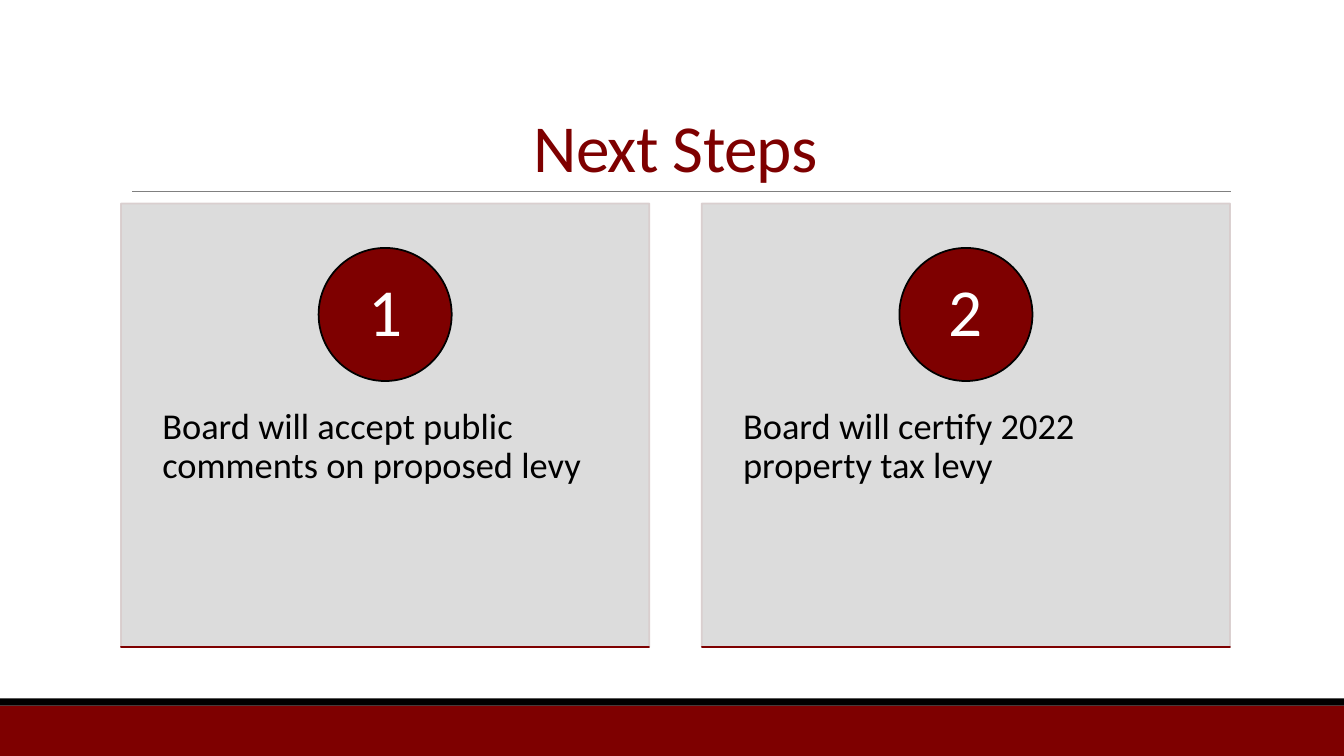
import pptx
import pptx.util
import pptx.dml.color
import pptx.enum.shapes
import pptx.enum.text
import pptx.oxml.ns
import lxml.etree

Inches = pptx.util.Inches
Shape = pptx.enum.shapes.MSO_SHAPE
Anchor = pptx.enum.text.MSO_ANCHOR
Align = pptx.enum.text.PP_ALIGN
qn = pptx.oxml.ns.qn

COLORS = {
    "maroon": "7E0000",
    "black": "000000",
    "white": "FFFFFF",
    "rule": "808080",
    "card": "D9D9D9",
    "card_edge": "D8CCCC",
}


class Slide:
    """Holds the style and the current page."""

    font = "Calibri"

    def __init__(self, page):
        self.page = page

    def paint(self, fill, color, alpha=None):
        fill.solid()
        fill.fore_color.rgb = pptx.dml.color.RGBColor.from_string(COLORS[color])
        if alpha:
            node = fill._xPr.find(qn("a:solidFill"))[0]
            lxml.etree.SubElement(node, qn("a:alpha"), val=str(alpha * 1000))

    def shape(self, kind, place, fill, edge=None, alpha=None):
        shape = self.page.shapes.add_shape(kind, *map(Inches, place))
        shape.shadow.inherit = False
        self.paint(shape.fill, fill, alpha)
        if edge:
            shape.line.width = pptx.util.Pt(1.25)
            self.paint(shape.line.fill, edge, alpha)
        else:
            shape.line.fill.background()
        return shape

    def line(self, start, end, color, width):
        line = self.page.shapes.add_connector(
            pptx.enum.shapes.MSO_CONNECTOR.STRAIGHT, *map(Inches, start + end))
        line.line.width = pptx.util.Pt(width)
        self.paint(line.line.fill, color)
        lxml.etree.SubElement(line._element.spPr, qn("a:effectLst"))

    def label(self, shape, words, size, color, align, anchor,
              margins=(0.1, 0.05), spacing=0.9, tracking=None):
        frame = shape.text_frame
        frame.word_wrap = True
        frame.vertical_anchor = anchor
        frame.margin_left = frame.margin_right = Inches(margins[0])
        frame.margin_top = frame.margin_bottom = Inches(margins[1])
        para = frame.paragraphs[0]
        para.alignment = align
        para.line_spacing = spacing
        span = para.add_run()
        span.text = words
        span.font.name = self.font
        span.font.size = pptx.util.Pt(size)
        self.paint(span.font.fill, color)
        if tracking:
            span.font._element.set("spc", str(int(tracking * 100)))

    def text(self, place, *args, **style):
        box = self.page.shapes.add_textbox(*map(Inches, place))
        self.label(box, *args, **style)

    def card(self, left, number, words):
        top, width, height, circle = 2.02, 5.24, 4.4, 1.32
        self.shape(Shape.RECTANGLE, (left, top, width, height),
                   "card", "card_edge", alpha=90)
        self.text((left, 3.69, width, 2.64), words, 26, "black",
                  Align.LEFT, Anchor.TOP, margins=(0.41, 0.36))
        badge = self.shape(Shape.OVAL, (left + (width - circle) / 2, top + 0.44,
                                        circle, circle), "maroon", "black")
        self.label(badge, str(number), 48, "white", Align.CENTER,
                   Anchor.MIDDLE, margins=(0.1, 0.01))
        self.shape(Shape.RECTANGLE, (left, top + height, width, 0),
                   "maroon", "maroon")


def main():
    deck = pptx.Presentation()
    deck.slide_width, deck.slide_height = Inches(13.33), Inches(7.5)
    slide = Slide(deck.slides.add_slide(deck.slide_layouts[6]))

    # Footer bands
    slide.shape(Shape.RECTANGLE, (0, 7, 13.33, 0.5), "maroon")
    slide.shape(Shape.RECTANGLE, (0, 6.93, 13.33, 0.07), "black")

    # Title and rule
    slide.line((1.31, 1.9), (12.21, 1.9), "rule", 0.5)
    slide.text((1.2, 0.31, 11, 1.59), "Next Steps", 48, "maroon",
               Align.CENTER, Anchor.BOTTOM, spacing=0.85, tracking=-0.5)

    # Numbered cards
    steps = ["Board will accept public comments on proposed levy",
             "Board will certify 2022 property tax levy"]
    for index, words in enumerate(steps):
        slide.card(1.2 + index * 5.76, index + 1, words)

    deck.save("out.pptx")


if __name__ == "__main__":
    main()
